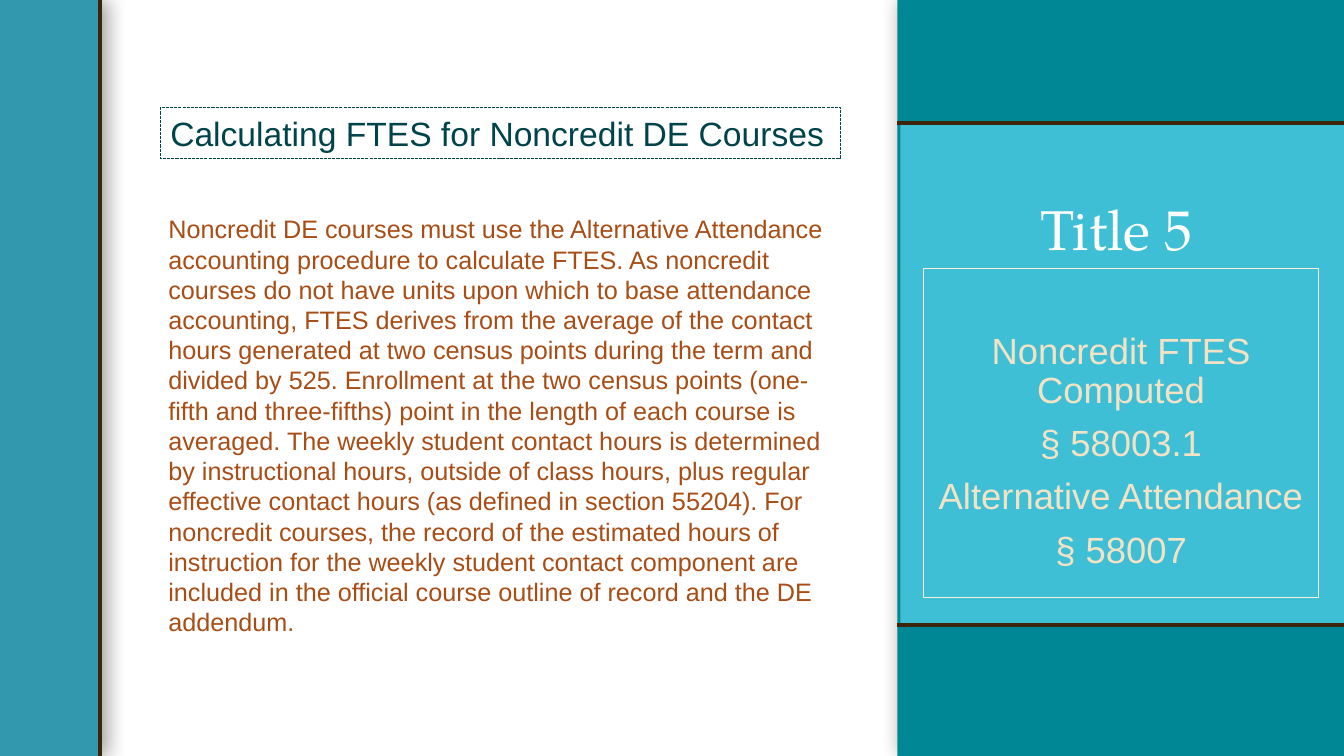
from dataclasses import dataclass
from typing import Optional

from pptx import Presentation
from pptx.dml.color import RGBColor
from pptx.enum.dml import MSO_LINE_DASH_STYLE as Dash
from pptx.enum.shapes import MSO_CONNECTOR as Connector, MSO_SHAPE as Shape
from pptx.enum.text import MSO_ANCHOR as Anchor, MSO_AUTO_SIZE as AutoSize, PP_ALIGN as Align
from pptx.oxml import parse_xml
from pptx.oxml.ns import nsdecls
from pptx.util import Emu, Pt

PX = 9144
WIDTH, HEIGHT = 1333, 750
PANEL_LEFT = 890

WHITE = RGBColor(0xFF, 0xFF, 0xFF)
DARK_TEAL = RGBColor(0x00, 0x44, 0x4B)
TEAL = RGBColor(0x00, 0x87, 0x96)
AQUA = RGBColor(0x3E, 0xBF, 0xD6)
STEEL = RGBColor(0x32, 0x98, 0xAE)
RUST = RGBColor(0xA8, 0x4D, 0x15)
BROWN = RGBColor(0x3F, 0x24, 0x0D)
CREAM = RGBColor(0xF4, 0xE2, 0xC5)
PALE_CREAM = RGBColor(0xF9, 0xEF, 0xDC)

BODY = (
    "Noncredit DE courses must use the Alternative Attendance accounting procedure to "
    "calculate FTES. As noncredit courses do not have units upon which to base attendance "
    "accounting, FTES derives from the average of the contact hours generated at two census "
    "points during the term and divided by 525. Enrollment at the two census points "
    "(one-fifth and three-fifths) point in the length of each course is averaged. The weekly "
    "student contact hours is determined by instructional hours, outside of class hours, plus "
    "regular effective contact hours (as defined in section 55204). For noncredit courses, "
    "the record of the estimated hours of instruction for the weekly student contact "
    "component are included in the official course outline of record and the DE addendum."
)
CITATIONS = ["Noncredit FTES Computed", "§ 58003.1", "Alternative Attendance", "§ 58007"]


@dataclass(frozen=True)
class Box:
    left: int
    top: int
    width: int
    height: int

    def emu(self) -> list[Emu]:
        """Return the box as EMU lengths."""
        return [Emu(n * PX) for n in (self.left, self.top, self.width, self.height)]


@dataclass(frozen=True)
class Panel:
    box: Box
    fill: Optional[RGBColor] = None
    line: Optional[RGBColor] = None
    dash: Optional[Dash] = None
    shadow: bool = False


@dataclass(frozen=True)
class Rule:
    start: tuple[int, int]
    end: tuple[int, int]


HEADING = Panel(Box(159, 107, 675, 50), line=DARK_TEAL, dash=Dash.SQUARE_DOT)
SIDE_PANEL = Panel(Box(PANEL_LEFT, 0, WIDTH - PANEL_LEFT, HEIGHT), fill=TEAL, shadow=True)
BAND = Panel(Box(893, 121, 440, 499), fill=AQUA)
CITATION_FRAME = Panel(Box(916, 266, 392, 327), line=PALE_CREAM)
LEFT_STRIP = Panel(Box(0, 0, 101, HEIGHT), fill=STEEL, shadow=True)
RULES = [Rule((99, HEIGHT), (99, 0))] + [
    Rule((WIDTH, y), (PANEL_LEFT, y)) for y in (122, 620)
]


def draw_panel(slide, panel: Panel):
    """Draw a rectangle with its fill, outline and shadow."""
    shape = slide.shapes.add_shape(Shape.RECTANGLE, *panel.box.emu())
    shape.shadow.inherit = False
    if panel.fill is None:
        shape.fill.background()
    else:
        shape.fill.solid()
        shape.fill.fore_color.rgb = panel.fill
    if panel.line is None:
        shape.line.fill.background()
    else:
        shape.line.color.rgb = panel.line
        shape.line.width = Pt(0.75)
        if panel.dash is not None:
            shape.line.dash_style = panel.dash
    if panel.shadow:
        effects = shape._element.spPr.find("{*}effectLst")
        effects.append(parse_xml(
            f'<a:outerShdw {nsdecls("a")} blurRad="{Pt(15)}" dist="{Pt(3)}" dir="0">'
            '<a:srgbClr val="000000"><a:alpha val="40000"/></a:srgbClr></a:outerShdw>'
        ))
    return shape


def draw_rule(slide, rule: Rule) -> None:
    """Draw a thick brown line."""
    ends = [Emu(n * PX) for n in rule.start + rule.end]
    line = slide.shapes.add_connector(Connector.STRAIGHT, *ends)
    line.line.color.rgb = BROWN
    line.line.width = Pt(3)
    line._element.spPr.append(parse_xml(f'<a:effectLst {nsdecls("a")}/>'))


def write_text(shape, texts: list[str], *, size: int, color: RGBColor, font: str = "Arial",
               align: Align = Align.LEFT, anchor: Anchor = Anchor.TOP, wrap: bool = True,
               grow: bool = False, spacing: Optional[float] = None, gap: int = 0,
               indent: int = 0, inset_top: int = 5) -> None:
    """Fill a shape with formatted paragraphs."""
    frame = shape.text_frame
    frame.word_wrap = wrap
    frame.vertical_anchor = anchor
    frame.auto_size = AutoSize.SHAPE_TO_FIT_TEXT if grow else AutoSize.NONE
    frame.margin_top = Emu(inset_top * PX)
    frame.margin_left = Emu((10 + indent) * PX)
    for index, text in enumerate(texts):
        paragraph = frame.add_paragraph() if index else frame.paragraphs[0]
        paragraph.alignment = align
        if spacing is not None:
            paragraph.line_spacing = spacing
        if index:
            paragraph.space_before = Pt(gap)
        run = paragraph.add_run()
        run.text = text
        run.font.name = font
        run.font.size = Pt(size)
        run.font.color.rgb = color


def main() -> None:
    """Build the slide and save it."""
    presentation = Presentation()
    presentation.slide_width, presentation.slide_height = Emu(WIDTH * PX), Emu(HEIGHT * PX)
    slide = presentation.slides.add_slide(presentation.slide_layouts[6])

    body = slide.shapes.add_textbox(*Box(143, 207, 691, 434).emu())
    write_text(body, [BODY], size=18, color=RUST, grow=True, indent=14)
    heading = draw_panel(slide, HEADING)
    write_text(heading, ["Calculating FTES for Noncredit DE Courses"], size=24,
               color=DARK_TEAL, wrap=False, grow=True)

    draw_panel(slide, SIDE_PANEL)
    draw_panel(slide, BAND)
    citations = draw_panel(slide, CITATION_FRAME)
    write_text(citations, CITATIONS, size=26, color=CREAM, align=Align.CENTER,
               spacing=0.9, gap=10, inset_top=64)
    draw_panel(slide, LEFT_STRIP)

    title = slide.shapes.add_textbox(*Box(918, 146, 392, 119).emu())
    write_text(title, ["Title 5 "], size=40, color=WHITE, font="TeX Gyre Pagella",
               align=Align.CENTER, anchor=Anchor.BOTTOM, spacing=0.9)
    for rule in RULES:
        draw_rule(slide, rule)

    presentation.save("out.pptx")


if __name__ == "__main__":
    main()
